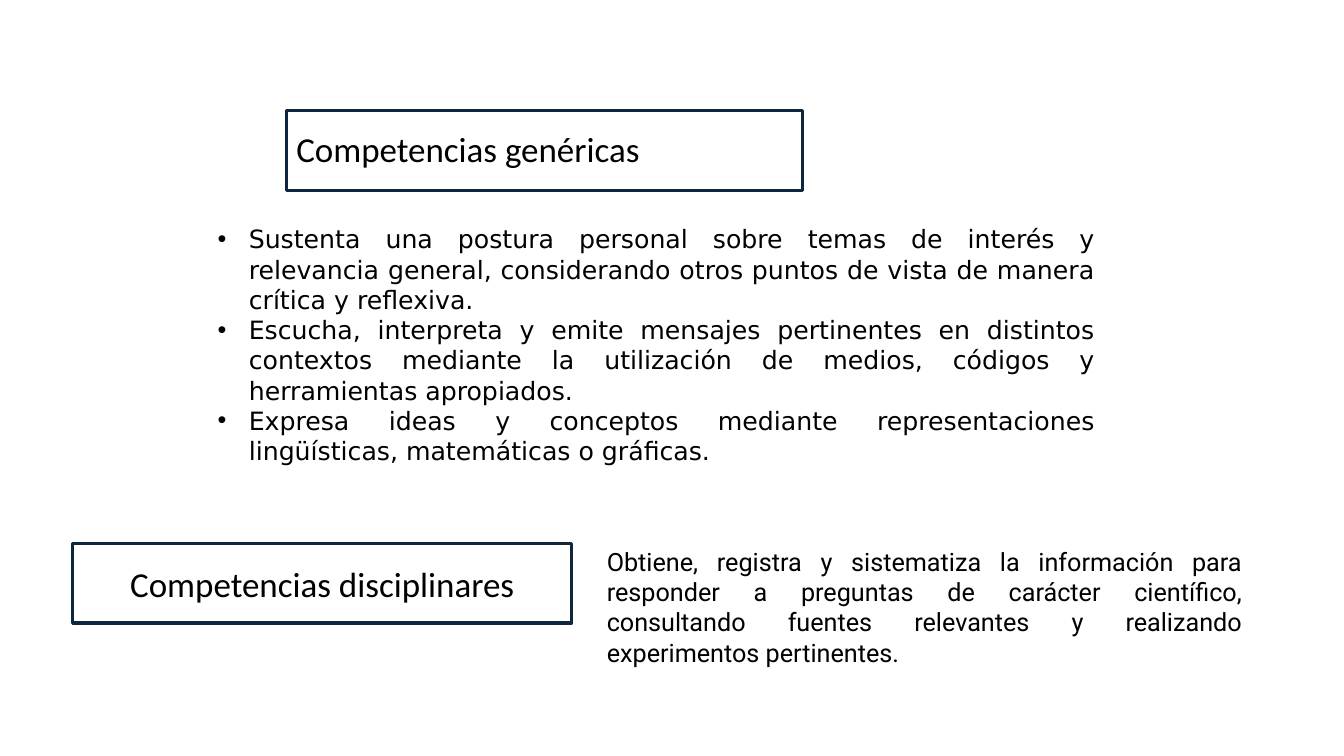
"""Build a slide listing generic and disciplinary competencies."""
from lxml import etree
from pptx import Presentation
from pptx.dml.color import RGBColor
from pptx.enum.shapes import MSO_SHAPE
from pptx.enum.text import MSO_ANCHOR, PP_ALIGN
from pptx.oxml.ns import qn
from pptx.util import Inches, Pt

RECTANGLE = MSO_SHAPE.RECTANGLE
MIDDLE, TOP = MSO_ANCHOR.MIDDLE, MSO_ANCHOR.TOP
LEFT, CENTER, JUSTIFY = PP_ALIGN.LEFT, PP_ALIGN.CENTER, PP_ALIGN.JUSTIFY
COLORS = {"border": "0F273D", "text": "000000"}
BULLET_INDENT = 0.31

HEADINGS = [
    {"text": "Competencias genéricas", "box": (2.84, 1.1, 5.12, 0.79),
     "align": LEFT, "insets": (0.1, 0.05), "spacing": 0.9},
    {"text": "Competencias disciplinares", "box": (0.72, 5.39, 4.95, 0.79),
     "align": CENTER, "insets": (0.04, 0.04), "spacing": 1.0},
]
BODIES = [
    {"box": (2.06, 2.17, 8.9, 2.52), "font": "DejaVu Sans", "bulleted": True,
     "lines": [
         "Sustenta una postura personal sobre temas de interés y relevancia general, "
         "considerando otros puntos de vista de manera crítica y reflexiva.",
         "Escucha, interpreta y emite mensajes pertinentes en distintos contextos "
         "mediante la utilización de medios, códigos y herramientas apropiados.",
         "Expresa ideas y conceptos mediante representaciones lingüísticas, "
         "matemáticas o gráficas.",
     ]},
    {"box": (5.92, 5.37, 6.5, 1.55), "font": "Roboto", "bulleted": False,
     "lines": [
         "Obtiene, registra y sistematiza la información para responder a preguntas "
         "de carácter científico, consultando fuentes relevantes y realizando "
         "experimentos pertinentes.",
     ]},
]


def color(name):
    return RGBColor.from_string(COLORS[name])


def add_bullet(paragraph):
    properties = paragraph._p.get_or_add_pPr()
    properties.set("marL", str(Inches(BULLET_INDENT)))
    properties.set("indent", str(-Inches(BULLET_INDENT)))
    etree.SubElement(properties, qn("a:buFont"), typeface="Arial")
    etree.SubElement(properties, qn("a:buChar"), char="•")


def write_paragraph(paragraph, text, font, size, align):
    paragraph.text = text
    paragraph.alignment = align
    paragraph.font.name = font
    paragraph.font.size = Pt(size)
    paragraph.font.color.rgb = color("text")


def add_heading(slide, heading):
    shape = slide.shapes.add_shape(RECTANGLE, *map(Inches, heading["box"]))
    shape.shadow.inherit = False
    shape.fill.background()
    shape.line.color.rgb = color("border")
    shape.line.width = Pt(2.25)
    frame = shape.text_frame
    frame.word_wrap = True
    frame.vertical_anchor = MIDDLE
    side, edge = map(Inches, heading["insets"])
    frame.margin_left = frame.margin_right = side
    frame.margin_top = frame.margin_bottom = edge
    paragraph = frame.paragraphs[0]
    write_paragraph(paragraph, heading["text"], "Calibri", 25, heading["align"])
    paragraph.line_spacing = heading["spacing"]


def add_body(slide, body):
    frame = slide.shapes.add_textbox(*map(Inches, body["box"])).text_frame
    frame.word_wrap = True
    frame.vertical_anchor = TOP
    for index, line in enumerate(body["lines"]):
        paragraph = frame.add_paragraph() if index else frame.paragraphs[0]
        if body["bulleted"]:
            add_bullet(paragraph)
        write_paragraph(paragraph, line, body["font"], 18, JUSTIFY)


def main():
    presentation = Presentation()
    presentation.slide_width = Inches(13.33)
    presentation.slide_height = Inches(7.5)
    slide = presentation.slides.add_slide(presentation.slide_layouts[6])
    for heading, body in zip(HEADINGS, BODIES):
        add_heading(slide, heading)
        add_body(slide, body)
    presentation.save("out.pptx")


if __name__ == "__main__":
    main()
